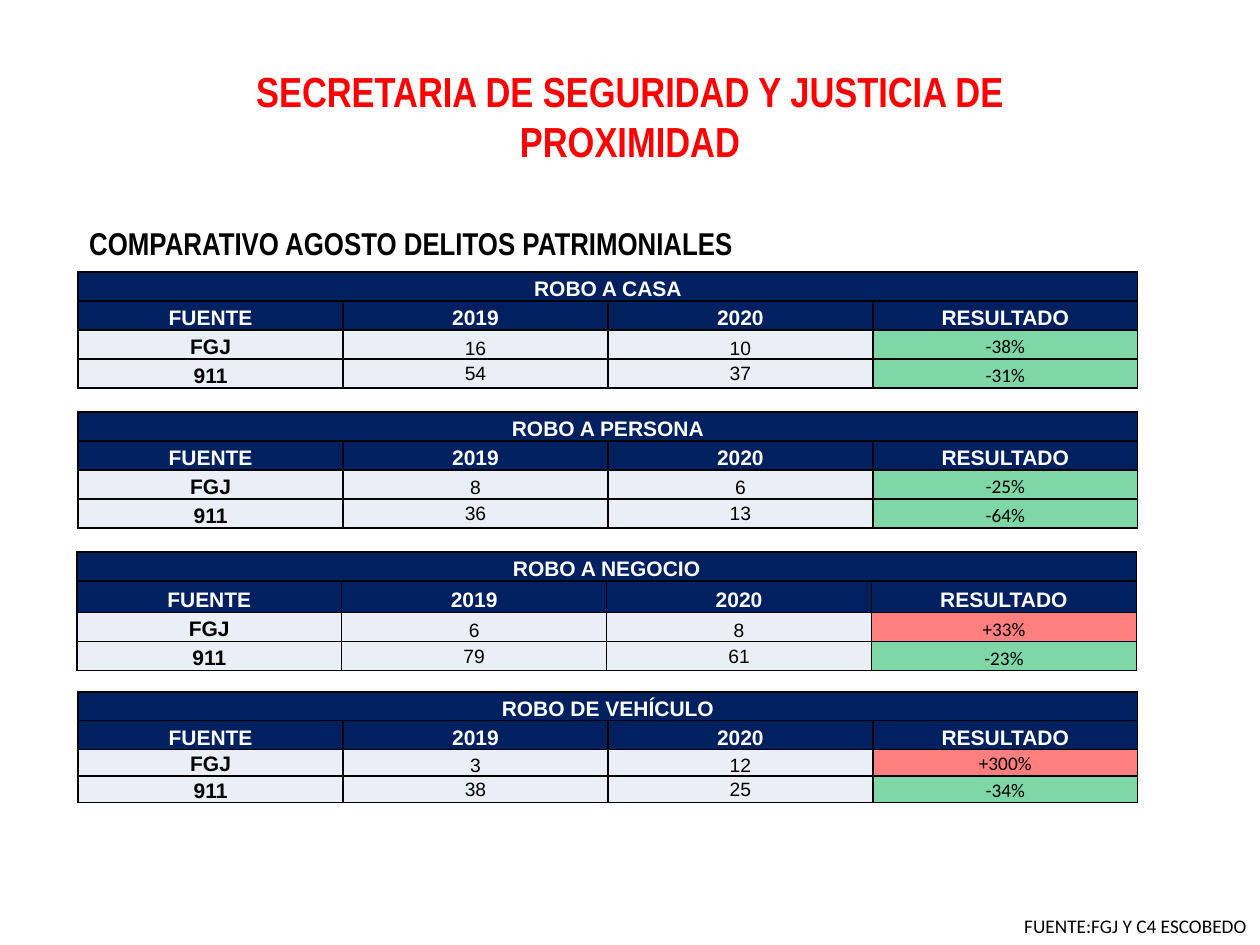
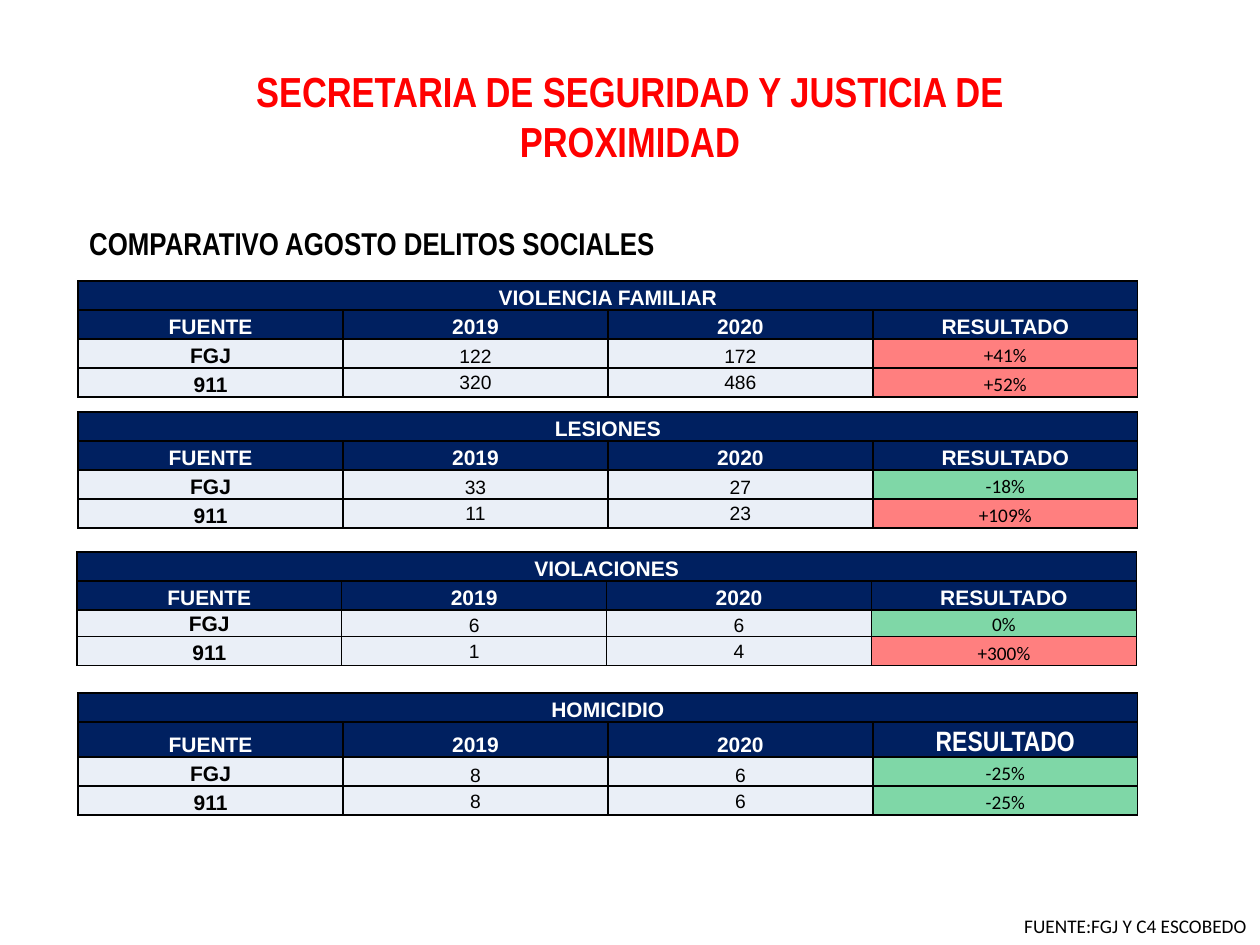
from dataclasses import dataclass

from lxml.etree import SubElement
from pptx import Presentation
from pptx.dml.color import RGBColor
from pptx.enum.text import MSO_ANCHOR, MSO_AUTO_SIZE, PP_ALIGN
from pptx.oxml.ns import qn
from pptx.slide import Slide
from pptx.table import _Cell
from pptx.text.text import TextFrame
from pptx.util import Inches, Pt


@dataclass(frozen=True)
class Theme:
    navy: str = "002060"
    pale: str = "EAEFF7"
    green: str = "00B050"
    red: str = "FF0000"
    black: str = "000000"
    white: str = "FFFFFF"
    body: str = "Arial"
    narrow: str = "Arial Narrow"
    plain: str = "Calibri"
    title_size: int = 24
    subtitle_size: int = 18
    large_header_size: int = 16
    header_size: int = 12
    value_size: int = 11
    border_pt: int = 1
    result_alpha: int = 50


@dataclass(frozen=True)
class Crime:
    name: str
    top: float
    fgj: tuple[str, str, str]
    c911: tuple[str, str, str]
    left: float = 0.62
    row_heights: tuple[float, ...] = (0.23, 0.23, 0.23, 0.23)
    large_result: bool = False


@dataclass(frozen=True)
class Report:
    subtitle: str
    crimes: tuple[Crime, ...]


THEME = Theme()
TITLE = "SECRETARIA DE SEGURIDAD Y JUSTICIA DE PROXIMIDAD"
SOURCE = "FUENTE:FGJ Y C4 ESCOBEDO"
HEADERS = ("FUENTE", "2019", "2020", "RESULTADO")
TABLE_WIDTH = 8.41

REPORTS = (
    Report("COMPARATIVO AGOSTO DELITOS PATRIMONIALES", (
        Crime("ROBO A CASA", 2.16, ("16", "10", "-38%"), ("54", "37", "-31%")),
        Crime("ROBO A PERSONA", 3.27, ("8", "6", "-25%"), ("36", "13", "-64%")),
        Crime("ROBO A NEGOCIO", 4.38, ("6", "8", "+33%"), ("79", "61", "-23%"),
              left=0.61, row_heights=(0.23, 0.25, 0.23, 0.23)),
        Crime("ROBO DE VEHÍCULO", 5.49, ("3", "12", "+300%"), ("38", "25", "-34%"),
              row_heights=(0.23, 0.23, 0.21, 0.21)),
    )),
    Report("COMPARATIVO AGOSTO DELITOS SOCIALES", (
        Crime("VIOLENCIA FAMILIAR", 2.23, ("122", "172", "+41%"), ("320", "486", "+52%")),
        Crime("LESIONES", 3.27, ("33", "27", "-18%"), ("11", "23", "+109%")),
        Crime("VIOLACIONES", 4.38, ("6", "6", "0%"), ("1", "4", "+300%"),
              left=0.61, row_heights=(0.23, 0.23, 0.21, 0.23)),
        Crime("HOMICIDIO", 5.5, ("8", "6", "-25%"), ("8", "6", "-25%"),
              row_heights=(0.23, 0.28, 0.23, 0.23), large_result=True),
    )),
)


def write(tf: TextFrame, text: str, *, size: int, font: str, color: str = THEME.black,
          bold: bool = False, align: PP_ALIGN = PP_ALIGN.LEFT) -> None:
    p = tf.paragraphs[0]
    p.alignment = align
    r = p.add_run()
    r.text = text
    r.font.size = Pt(size)
    r.font.name = font
    r.font.bold = bold
    r.font.color.rgb = RGBColor.from_string(color)


def add_text(s: Slide, text: str, left: float, top: float, width: float, height: float,
             *, wrap: bool = True, **style) -> None:
    tf = s.shapes.add_textbox(Inches(left), Inches(top), Inches(width), Inches(height)).text_frame
    tf.word_wrap = wrap
    tf.auto_size = MSO_AUTO_SIZE.SHAPE_TO_FIT_TEXT
    write(tf, text, **style)


def format_cell(cell: _Cell, fill: str, alpha: int = 100) -> None:
    """Set margins, anchor, borders and fill; borders must precede the fill."""
    cell.margin_left = cell.margin_right = cell.margin_top = Inches(0.01)
    cell.margin_bottom = Inches(0)
    cell.vertical_anchor = MSO_ANCHOR.BOTTOM
    tc_pr = cell._tc.get_or_add_tcPr()
    for side in ("a:lnL", "a:lnR", "a:lnT", "a:lnB"):
        ln = SubElement(tc_pr, qn(side), w=str(Pt(THEME.border_pt)))
        SubElement(SubElement(ln, qn("a:solidFill")), qn("a:srgbClr"), val=THEME.black)
    cell.fill.solid()
    cell.fill.fore_color.rgb = RGBColor.from_string(fill)
    if alpha < 100:
        color = tc_pr.find(qn("a:solidFill")).find(qn("a:srgbClr"))
        SubElement(color, qn("a:alpha"), val=str(alpha * 1000))


def add_header(cell: _Cell, text: str, large: bool = False) -> None:
    format_cell(cell, THEME.navy)
    write(cell.text_frame, text, color=THEME.white, bold=True, align=PP_ALIGN.CENTER,
          size=THEME.large_header_size if large else THEME.header_size,
          font=THEME.narrow if large else THEME.body)


def add_crime_table(s: Slide, crime: Crime) -> None:
    table = s.shapes.add_table(
        4, len(HEADERS), Inches(crime.left), Inches(crime.top),
        Inches(TABLE_WIDTH), Inches(sum(crime.row_heights))).table
    table.first_row = table.horz_banding = False
    for row, height in zip(table.rows, crime.row_heights):
        row.height = Inches(height)

    for col, header in enumerate(HEADERS):
        format_cell(table.cell(0, col), THEME.navy)
        add_header(table.cell(1, col), header, crime.large_result and header == "RESULTADO")
    name_cell = table.cell(0, 0)
    name_cell.merge(table.cell(0, len(HEADERS) - 1))
    write(name_cell.text_frame, crime.name, size=THEME.header_size, font=THEME.body,
          color=THEME.white, bold=True, align=PP_ALIGN.CENTER)

    for row, (source, values) in enumerate((("FGJ", crime.fgj), ("911", crime.c911)), 2):
        *counts, result = values
        cell = table.cell(row, 0)
        format_cell(cell, THEME.pale)
        write(cell.text_frame, source, size=THEME.header_size, font=THEME.body,
              bold=True, align=PP_ALIGN.CENTER)
        for col, count in enumerate(counts, 1):
            cell = table.cell(row, col)
            format_cell(cell, THEME.pale)
            if source == "911":
                cell.vertical_anchor = MSO_ANCHOR.MIDDLE
            write(cell.text_frame, count, size=THEME.value_size, font=THEME.body,
                  align=PP_ALIGN.CENTER)
        cell = table.cell(row, 3)
        format_cell(cell, THEME.red if result.startswith("+") else THEME.green,
                    THEME.result_alpha)
        write(cell.text_frame, result, size=THEME.value_size, font=THEME.plain,
              align=PP_ALIGN.CENTER)


def add_report(prs: Presentation, report: Report) -> None:
    s = prs.slides.add_slide(prs.slide_layouts[6])
    add_text(s, TITLE, 1.9, 0.47, 6.2, 0.91, size=THEME.title_size, font=THEME.narrow,
             color=THEME.red, bold=True, align=PP_ALIGN.CENTER)
    add_text(s, report.subtitle, 0.61, 1.73, 7.38, 0.4, size=THEME.subtitle_size,
             font=THEME.narrow, bold=True)
    for crime in report.crimes:
        add_crime_table(s, crime)
    add_text(s, SOURCE, 8.03, 7.21, 1.98, 0.29, wrap=False, size=THEME.value_size,
             font=THEME.plain)


def main() -> None:
    prs = Presentation()
    prs.slide_width, prs.slide_height = Inches(10), Inches(7.5)
    for report in REPORTS:
        add_report(prs, report)
    prs.save("out.pptx")


if __name__ == "__main__":
    main()
